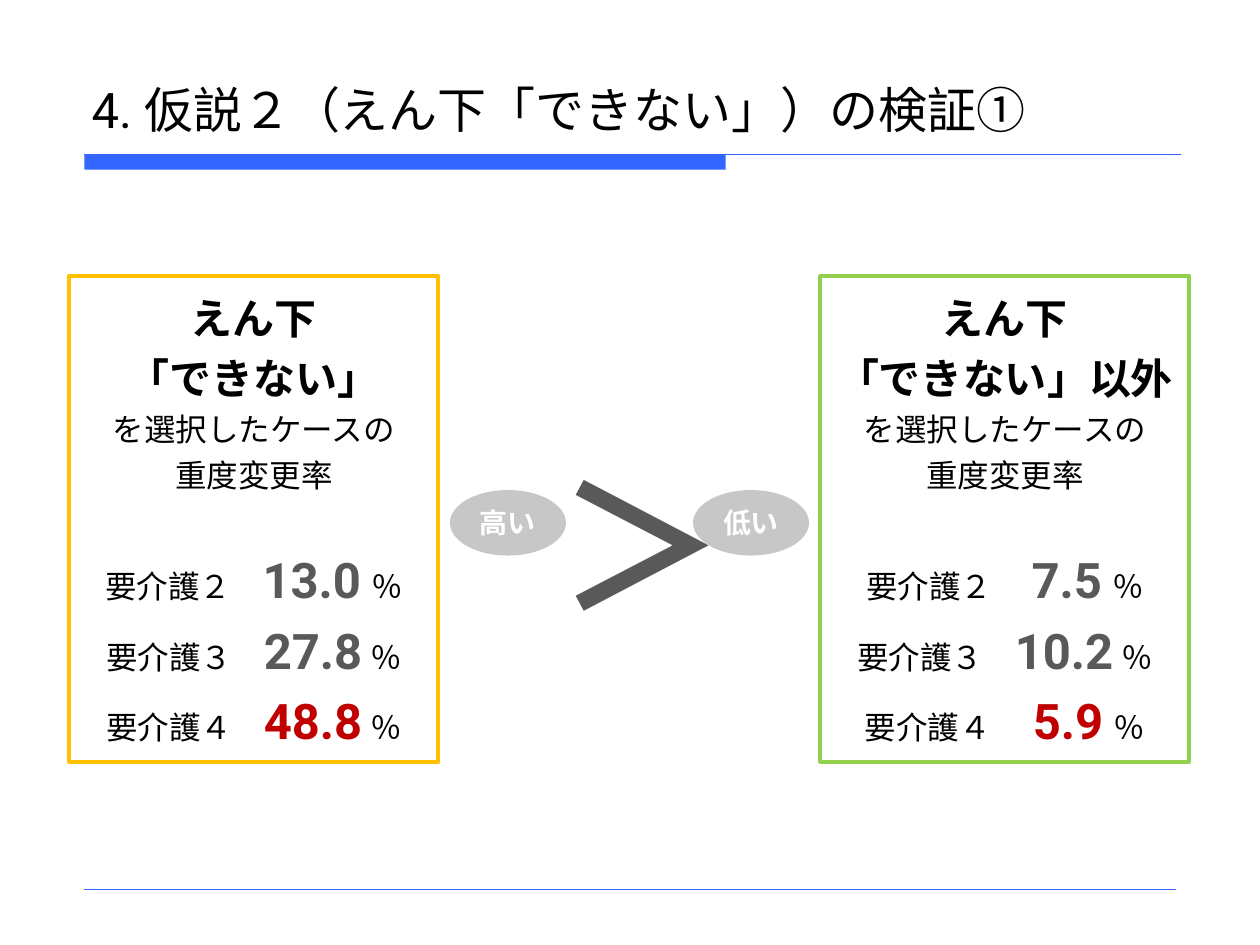
from dataclasses import dataclass

from lxml import etree
from pptx import Presentation
from pptx.dml.color import RGBColor
from pptx.enum import shapes, text
from pptx.oxml import ns
from pptx.util import Cm, Pt


@dataclass(frozen=True)
class Theme:
    body_font: str = "Roboto"
    mark_font: str = "Noto Sans CJK JP"
    black: str = "000000"
    white: str = "FFFFFF"
    blue: str = "3366FF"
    amber: str = "FFC000"
    green: str = "92D050"
    gray: str = "595959"
    pale_gray: str = "C7C7C7"
    red: str = "C00000"
    title: int = 28
    value: int = 28
    heading: int = 24
    body: int = 18
    badge: int = 16
    sign: int = 96


THEME = Theme()


def add_run(paragraph, content, size, color=THEME.black, bold=False, font=THEME.body_font):
    run = paragraph.add_run()
    run.text = content
    run.font.size = Pt(size)
    run.font.bold = bold
    run.font.name = font
    run.font.color.rgb = RGBColor.from_string(color)
    east_asian = etree.SubElement(run._r.get_or_add_rPr(), ns.qn("a:ea"))
    east_asian.set("typeface", font)


def add_box(slide, kind, left, top, width, height, fill, line=None):
    shape = slide.shapes.add_shape(kind, Cm(left), Cm(top), Cm(width), Cm(height))
    shape.shadow.inherit = False
    shape.fill.solid()
    shape.fill.fore_color.rgb = RGBColor.from_string(fill)
    if line:
        shape.line.color.rgb = RGBColor.from_string(line)
        shape.line.width = Pt(2.25)
    else:
        shape.line.fill.background()
    return shape


def add_rule(slide, left, top, width, weight):
    rule = slide.shapes.add_connector(
        shapes.MSO_CONNECTOR.STRAIGHT, Cm(left), Cm(top), Cm(left + width), Cm(top))
    rule.line.color.rgb = RGBColor.from_string(THEME.blue)
    rule.line.width = Pt(weight)
    etree.SubElement(rule._element.spPr, ns.qn("a:effectLst"))


def add_header(slide, left, top, width, height, title):
    # Title sits on the bottom edge of its box, above the bar and thin rule
    box = slide.shapes.add_textbox(Cm(left), Cm(top), Cm(width), Cm(height))
    frame = box.text_frame
    frame.word_wrap = True
    frame.vertical_anchor = text.MSO_ANCHOR.BOTTOM
    add_run(frame.paragraphs[0], title, THEME.title)
    rule_left, rule_top = left + 0.1, top + height + 0.2
    add_box(slide, shapes.MSO_SHAPE.RECTANGLE, rule_left, rule_top, 12.93, 0.3, THEME.blue)
    add_rule(slide, rule_left, rule_top, width - 0.13, 0.75)


def add_panel_line(frame, index):
    paragraph = frame.paragraphs[0] if index == 0 else frame.add_paragraph()
    paragraph.alignment = text.PP_ALIGN.CENTER
    paragraph.line_spacing = 1.2
    properties = paragraph._p.get_or_add_pPr()
    properties.set("marL", str(Cm(0.5)))
    properties.set("indent", str(-Cm(0.5)))
    return paragraph


def add_panel(slide, left, top, width, height, line, answer, rates):
    panel = add_box(slide, shapes.MSO_SHAPE.RECTANGLE, left, top, width, height,
                    THEME.white, line)
    frame = panel.text_frame
    frame.word_wrap = True
    frame.vertical_anchor = text.MSO_ANCHOR.TOP

    # Heading lines
    headings = [("えん下", THEME.heading, True), (answer, THEME.heading, True),
                ("を選択したケースの", THEME.body, False), ("重度変更率", THEME.body, False)]
    for index, (content, size, bold) in enumerate(headings):
        add_run(add_panel_line(frame, index), content, size, bold=bold)

    # One rate per care level; the last level is highlighted
    levels = ["要介護２", "要介護３", "要介護４"]
    for index, (level, (lead, value, trail)) in enumerate(zip(levels, rates)):
        paragraph = add_panel_line(frame, len(headings) + index)
        if index == 0:
            paragraph.space_before = Pt(25.3)
        color = THEME.red if level == levels[-1] else THEME.gray
        add_run(paragraph, level + "\u3000", THEME.body)
        if lead:
            add_run(paragraph, " ", lead)
        add_run(paragraph, value, THEME.value, color, True)
        add_run(paragraph, " ", trail)
        add_run(paragraph, "％", THEME.body)


def add_mark(shape, content, size, color):
    frame = shape.text_frame
    frame.word_wrap = False
    frame.vertical_anchor = text.MSO_ANCHOR.MIDDLE
    paragraph = frame.paragraphs[0]
    paragraph.alignment = text.PP_ALIGN.CENTER
    add_run(paragraph, content, size, color, True, THEME.mark_font)


def add_comparison(slide, left, top, width, height):
    # Large sign in the middle, one badge at each end
    sign = slide.shapes.add_textbox(Cm(left + 1.9), Cm(top), Cm(3.94), Cm(height))
    add_mark(sign, "＞", THEME.sign, THEME.gray)
    badge_width = 2.34
    for badge_left, label in [(left, "高い"), (left + width - badge_width, "低い")]:
        badge = add_box(slide, shapes.MSO_SHAPE.OVAL, badge_left, top + 1.14,
                        badge_width, 1.32, THEME.pale_gray)
        add_mark(badge, label, THEME.badge, THEME.white)


def main():
    presentation = Presentation()
    presentation.slide_width, presentation.slide_height = Cm(25.4), Cm(19.05)
    slide = presentation.slides.add_slide(presentation.slide_layouts[6])

    add_header(slide, 1.6, 0.84, 22.23, 2.08, "4. 仮説２（えん下「できない」）の検証①")
    add_rule(slide, 1.7, 17.93, 22, 0.25)

    # Each rate: size of the space before, value, size of the space after
    small, large = THEME.body, THEME.heading
    panel_top, panel_width, panel_height = 5.56, 7.44, 9.8
    add_panel(slide, 1.4, panel_top, panel_width, panel_height, THEME.amber, "「できない」",
              [(None, "13.0", large), (None, "27.8", small), (None, "48.8", small)])
    add_comparison(slide, 9.07, 8.74, 7.24, 4.37)
    add_panel(slide, 16.54, panel_top, panel_width, panel_height, THEME.green, "「できない」以外",
              [(small, "7.5", large), (None, "10.2", small), (large, "5.9", large)])

    presentation.save("out.pptx")


if __name__ == "__main__":
    main()
